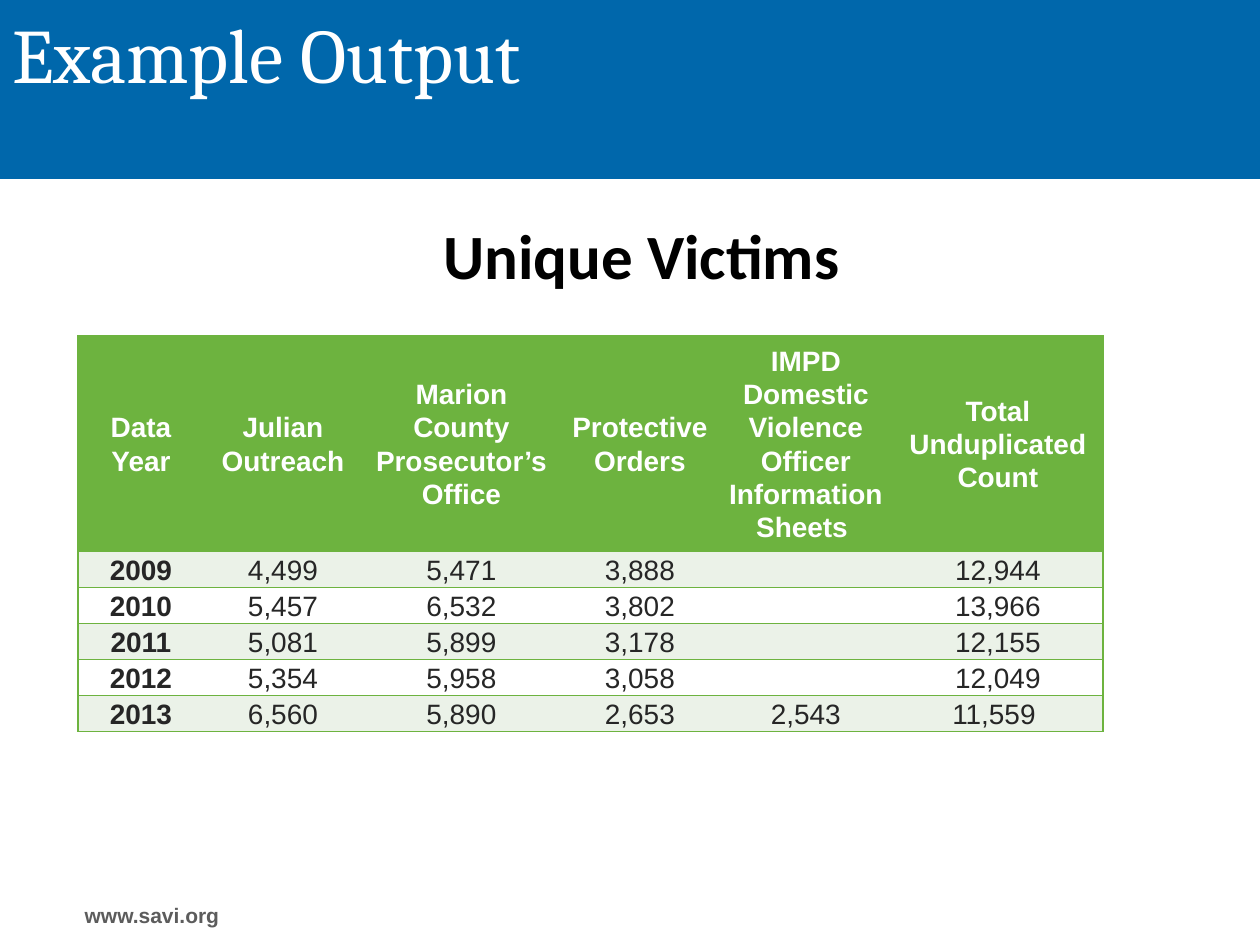
from dataclasses import dataclass

from lxml import etree
from pptx import Presentation
from pptx.dml.color import RGBColor
from pptx.enum.shapes import MSO_SHAPE
from pptx.enum.text import MSO_ANCHOR, PP_ALIGN
from pptx.oxml.ns import qn
from pptx.util import Emu, Pt

PX = 914400 // 126
RECTANGLE = MSO_SHAPE.RECTANGLE
TOP, MIDDLE = MSO_ANCHOR.TOP, MSO_ANCHOR.MIDDLE
LEFT, CENTER = PP_ALIGN.LEFT, PP_ALIGN.CENTER


@dataclass(frozen=True)
class Theme:
    blue: str = "0067AB"
    green: str = "6DB33F"
    pale_green: str = "EBF2E8"
    white: str = "FFFFFF"
    black: str = "000000"
    dark: str = "262626"
    gray: str = "5C5C5C"
    title_font: str = "Cambria"
    heading_font: str = "Calibri"
    body_font: str = "Arial"
    title_size: int = 44
    heading_size: int = 36
    table_size: int = 16
    footer_size: int = 12


class SlideBuilder:
    def __init__(self, page, theme):
        self.page = page
        self.theme = theme

    def band(self, left, top, width, height, color):
        shape = self.page.shapes.add_shape(RECTANGLE, *self.emu(left, top, width, height))
        shape.shadow.inherit = False
        shape.fill.solid()
        shape.fill.fore_color.rgb = RGBColor.from_string(color)
        shape.line.fill.background()

    def text(self, area, words, font, size, color, bold=False,
             align=LEFT, anchor=TOP, wrap=True):
        box = self.page.shapes.add_textbox(*self.emu(*area))
        frame = box.text_frame
        frame.word_wrap = wrap
        frame.vertical_anchor = anchor
        para = frame.paragraphs[0]
        para.alignment = align
        self.span(para, words, font, size, color, bold)

    def table(self, left, top, widths, heights, rows):
        theme = self.theme
        area = self.emu(left, top, sum(widths), sum(heights))
        grid = self.page.shapes.add_table(len(rows), len(widths), *area).table
        grid.horz_banding = False
        for column, width in zip(grid.columns, widths):
            column.width = Emu(width * PX)
        for row, height in zip(grid.rows, heights):
            row.height = Emu(height * PX)

        last = len(widths) - 1
        for r, row in enumerate(rows):
            header = r == 0
            band = theme.pale_green if r % 2 else theme.white
            for c, words in enumerate(row):
                cell = grid.cell(r, c)
                self.borders(cell, outer_left=c == 0, outer_right=c == last)
                cell.fill.solid()
                cell.fill.fore_color.rgb = RGBColor.from_string(theme.green if header else band)
                self.cell_text(cell, words, theme.white if header else theme.dark,
                               header or c == 0)

    def cell_text(self, cell, words, color, bold):
        cell.margin_left = cell.margin_right = Emu(9 * PX)
        cell.margin_top = cell.margin_bottom = 0
        cell.vertical_anchor = MIDDLE
        para = cell.text_frame.paragraphs[0]
        para.alignment = CENTER
        para.line_spacing = 1.07
        size = self.theme.table_size
        if words:
            self.span(para, words, self.theme.body_font, size, color, bold)
        else:
            # An empty cell keeps the table's type size, so its row stays low
            etree.SubElement(para._p, qn("a:endParaRPr"), sz=str(size * 100))

    def borders(self, cell, outer_left, outer_right):
        properties = cell._tc.get_or_add_tcPr()
        sides = {"lnL": outer_left, "lnR": outer_right, "lnT": True, "lnB": True}
        for side, drawn in sides.items():
            line = etree.SubElement(properties, qn(f"a:{side}"), w=str(Pt(1)))
            if drawn:
                fill = etree.SubElement(line, qn("a:solidFill"))
                etree.SubElement(fill, qn("a:srgbClr"), val=self.theme.green)
            else:
                etree.SubElement(line, qn("a:noFill"))

    @staticmethod
    def span(para, words, font, size, color, bold):
        span = para.add_run()
        span.text = words
        span.font.name = font
        span.font.size = Pt(size)
        span.font.bold = bold
        span.font.color.rgb = RGBColor.from_string(color)

    @staticmethod
    def emu(*lengths):
        return [Emu(length * PX) for length in lengths]


COLUMN_WIDTHS = [126, 158, 199, 158, 174, 210]
VICTIMS = [
    ["Data Year", "Julian Outreach", "Marion County Prosecutor’s Office", "Protective Orders",
     "IMPD Domestic Violence Officer Information Sheets ", "Total Unduplicated Count"],
    ["2009", "4,499", "5,471", "3,888", "", "12,944"],
    ["2010", "5,457", "6,532", "3,802", "", "13,966"],
    ["2011", "5,081", "5,899", "3,178", "", "12,155"],
    ["2012", "5,354", "5,958", "3,058", "", "12,049"],
    ["2013", "6,560", "5,890", "2,653", "2,543", "11,559 "],
]


def main():
    deck = Presentation()
    deck.slide_width, deck.slide_height = Emu(1260 * PX), Emu(945 * PX)
    page = deck.slides.add_slide(deck.slide_layouts[6])
    theme = Theme()
    builder = SlideBuilder(page, theme)

    # Title band and footer
    builder.band(0, 0, 1260, 179, theme.blue)
    builder.text((21, 896, 262, 38), "www.savi.org", theme.body_font, theme.footer_size,
                 theme.gray, bold=True, align=CENTER)
    builder.text((0, 0, 1218, 179), "Example Output", theme.title_font, theme.title_size,
                 theme.white)

    # Table of victims by year
    heights = [200] + [33] * (len(VICTIMS) - 1)
    builder.table(78, 336, COLUMN_WIDTHS, heights, VICTIMS)

    # Table heading
    builder.text((431, 210, 427, 89), "Unique Victims", theme.heading_font, theme.heading_size,
                 theme.black, bold=True, anchor=MIDDLE, wrap=False)

    deck.save("out.pptx")


if __name__ == "__main__":
    main()
